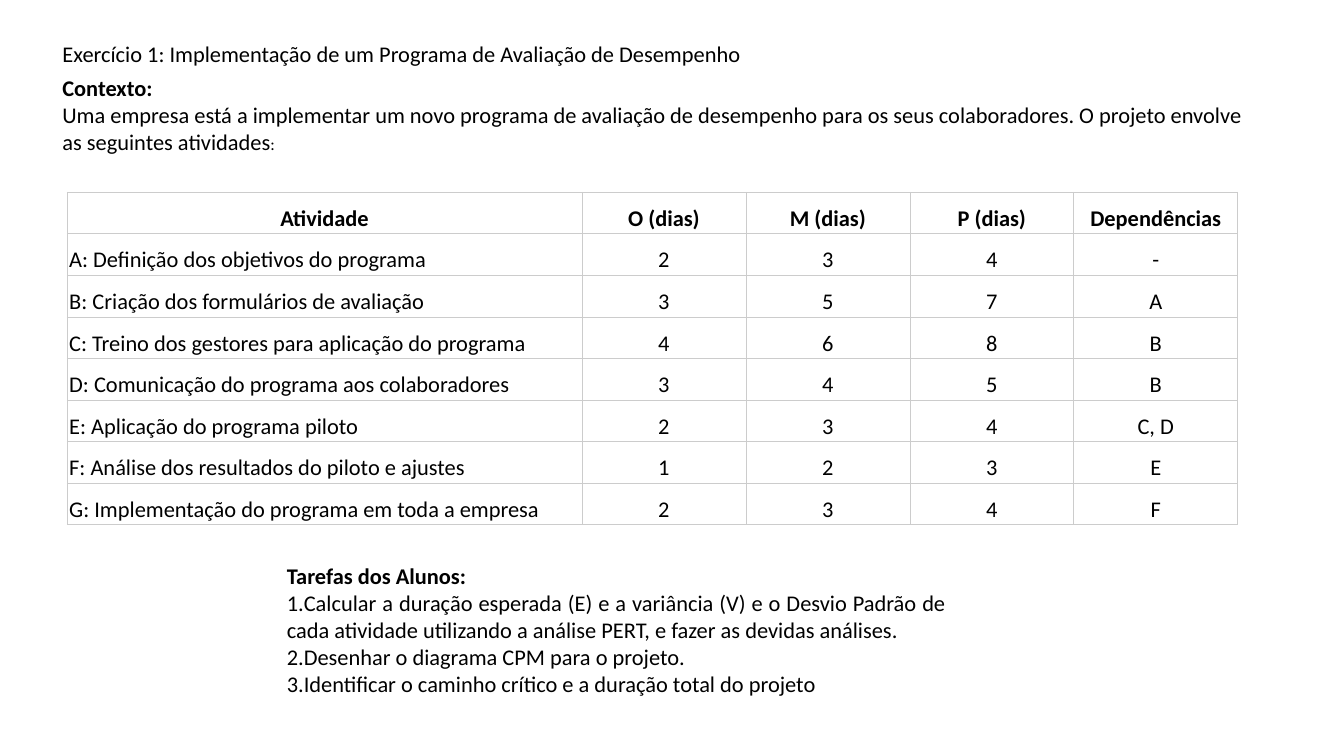
from dataclasses import dataclass

from lxml.etree import SubElement
from pptx import Presentation
from pptx.dml.color import RGBColor
from pptx.enum.text import MSO_ANCHOR as Anchor, MSO_AUTO_SIZE as AutoSize, PP_ALIGN as Align
from pptx.oxml.ns import qn
from pptx.util import Inches, Pt


@dataclass(frozen=True)
class Theme:
    font: str = "Calibri"
    text: str = "000000"
    border: str = "CCCCCC"
    border_width: float = 0.75
    size: int = 24
    small_size: int = 18


theme = Theme()


def add_text(paragraph, text, size=theme.size, bold=False, align=Align.LEFT):
    paragraph.alignment = align
    run = paragraph.add_run()
    run.text = text
    font_format = {"name": theme.font, "size": Pt(size), "bold": bold}
    for name, value in font_format.items():
        setattr(run.font, name, value)
    run.font.color.rgb = RGBColor.from_string(theme.text)


def add_border(cell):
    properties = cell._tc.get_or_add_tcPr()
    for side in ("lnL", "lnR", "lnT", "lnB"):
        line = SubElement(properties, qn(f"a:{side}"), w=str(Pt(theme.border_width)))
        fill = SubElement(line, qn("a:solidFill"))
        SubElement(fill, qn("a:srgbClr"), val=theme.border)


presentation = Presentation()
presentation.slide_width = Inches(20)
presentation.slide_height = Inches(11.25)
slide = presentation.slides.add_slide(presentation.slide_layouts[5])

title = slide.shapes.title
title_place = {"left": 0.83, "top": 0.54, "width": 12.5, "height": 0.5}
for name, value in title_place.items():
    setattr(title, name, Inches(value))
context = slide.shapes.add_textbox(Inches(0.83), Inches(1.05), Inches(17.83), Inches(1.31))
tasks = slide.shapes.add_textbox(Inches(4.17), Inches(8.32), Inches(10), Inches(2.12))

frame_format = {"word_wrap": True, "auto_size": AutoSize.SHAPE_TO_FIT_TEXT, "vertical_anchor": Anchor.TOP}
for shape in (title, context, tasks):
    for name, value in frame_format.items():
        setattr(shape.text_frame, name, value)

add_text(title.text_frame.paragraphs[0], "Exercício 1: Implementação de um Programa de Avaliação de Desempenho")

add_text(context.text_frame.paragraphs[0], "Contexto:", bold=True)
paragraph = context.text_frame.add_paragraph()
add_text(
    paragraph,
    "Uma empresa está a implementar um novo programa de avaliação de desempenho "
    "para os seus colaboradores. O projeto envolve as seguintes atividades",
)
add_text(paragraph, ":", size=theme.small_size)

activities = [
    ("Atividade", "O (dias)", "M (dias)", "P (dias)", "Dependências"),
    ("A: Definição dos objetivos do programa", "2", "3", "4", "-"),
    ("B: Criação dos formulários de avaliação", "3", "5", "7", "A"),
    ("C: Treino dos gestores para aplicação do programa", "4", "6", "8", "B"),
    ("D: Comunicação do programa aos colaboradores", "3", "4", "5", "B"),
    ("E: Aplicação do programa piloto", "2", "3", "4", "C, D"),
    ("F: Análise dos resultados do piloto e ajustes", "1", "2", "3", "E"),
    ("G: Implementação do programa em toda a empresa", "2", "3", "4", "F"),
]
column_widths = [7.66] + [2.44] * 4
table = slide.shapes.add_table(
    len(activities), len(column_widths), Inches(1), Inches(2.86), Inches(sum(column_widths)), Inches(4.95)
).table
table.first_row = False
table.horz_banding = False
for column, width in zip(table.columns, column_widths):
    column.width = Inches(width)

cell_format = {
    "margin_left": Inches(0.03),
    "margin_right": Inches(0.03),
    "margin_top": Inches(0.02),
    "margin_bottom": Inches(0.02),
    "vertical_anchor": Anchor.BOTTOM,
}
for row_index, row in enumerate(activities):
    for column_index, text in enumerate(row):
        cell = table.cell(row_index, column_index)
        for name, value in cell_format.items():
            setattr(cell, name, value)
        add_border(cell)
        cell.fill.background()
        is_header = row_index == 0
        align = Align.CENTER if is_header or column_index > 0 else Align.LEFT
        add_text(cell.text_frame.paragraphs[0], text, bold=is_header, align=align)

add_text(tasks.text_frame.paragraphs[0], "Tarefas dos Alunos:", bold=True, align=Align.JUSTIFY)
for task in (
    "Calcular a duração esperada (E) e a variância (V) e o Desvio Padrão de cada atividade "
    "utilizando a análise PERT, e fazer as devidas análises.",
    "Desenhar o diagrama CPM para o projeto.",
    "Identificar o caminho crítico e a duração total do projeto",
):
    paragraph = tasks.text_frame.add_paragraph()
    add_text(paragraph, task, align=Align.JUSTIFY)
    SubElement(paragraph._p.get_or_add_pPr(), qn("a:buAutoNum"), type="arabicPeriod")

presentation.save("out.pptx")
